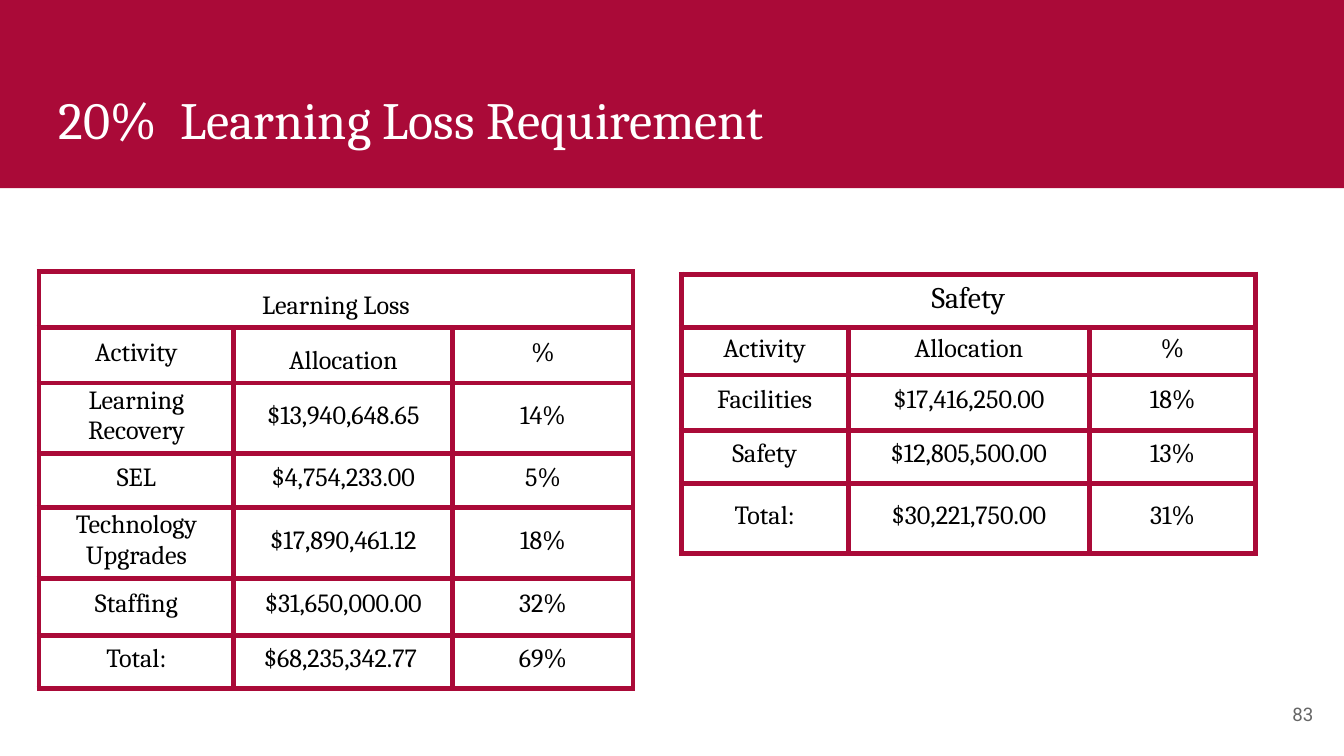
from lxml import etree
from pptx import Presentation
from pptx.dml.color import RGBColor
from pptx.enum.shapes import MSO_SHAPE
from pptx.enum.text import MSO_ANCHOR, PP_ALIGN
from pptx.oxml.ns import qn
from pptx.util import Inches, Pt

RECTANGLE = MSO_SHAPE.RECTANGLE
TOP, MIDDLE, BOTTOM = MSO_ANCHOR.TOP, MSO_ANCHOR.MIDDLE, MSO_ANCHOR.BOTTOM
LEFT, CENTER, RIGHT = PP_ALIGN.LEFT, PP_ALIGN.CENTER, PP_ALIGN.RIGHT

COLORS = {"crimson": "AA0A38", "white": "FFFFFF", "black": "000000", "gray": "666666"}
BORDER_WIDTH = Pt(3)
CELL_MARGINS = {
    "margin_left": Inches(0.01),
    "margin_top": Inches(0.01),
    "margin_right": Inches(0.01),
    "margin_bottom": Inches(0.05),
}


def write_text(frame, text, size, color, align, font="Cambria"):
    paragraph = frame.paragraphs[0]
    paragraph.alignment = align
    run = paragraph.add_run()
    run.text = text
    for name, value in {"name": font, "size": Pt(size)}.items():
        setattr(run.font, name, value)
    run.font.color.rgb = RGBColor.from_string(COLORS[color])


def draw_borders(cell):
    properties = cell._tc.get_or_add_tcPr()
    for position, side in enumerate(("a:lnL", "a:lnR", "a:lnT", "a:lnB")):
        line = etree.Element(qn(side), w=str(BORDER_WIDTH))
        fill = etree.SubElement(line, qn("a:solidFill"))
        etree.SubElement(fill, qn("a:srgbClr"), val=COLORS["crimson"])
        properties.insert(position, line)


prs = Presentation()
prs.slide_width = Inches(10)
prs.slide_height = prs.slide_width * 9 // 16
slide = prs.slides.add_slide(prs.slide_layouts[6])

banner = slide.shapes.add_shape(RECTANGLE, 0, 0, prs.slide_width, Inches(1.4))
banner.shadow.inherit = False
banner.fill.solid()
banner.fill.fore_color.rgb = RGBColor.from_string(COLORS["crimson"])
banner.line.fill.background()

labels = [
    ((0.34, 0.55, 9.32, 0.68), TOP, "20%  Learning Loss Requirement ", 28, "white", LEFT, "Cambria"),
    ((9.27, 5.1, 0.6, 0.43), MIDDLE, "83", 10, "gray", RIGHT, "Roboto"),
]
for box, anchor, text, size, color, align, font in labels:
    frame = slide.shapes.add_textbox(*map(Inches, box)).text_frame
    frame.word_wrap = True
    frame.vertical_anchor = anchor
    for side in ("left", "top", "right", "bottom"):
        setattr(frame, f"margin_{side}", Inches(0.1))
    write_text(frame, text, size, color, align, font)

HEADER = ("Activity", "Allocation", "%")
budgets = [
    {
        "heading": "Learning Loss",
        "heading_size": 14,
        "position": (0.29, 2.02),
        "widths": (1.45, 1.63, 1.34),
        "heights": (0.42, 0.41, 0.41, 0.4, 0.53, 0.42, 0.4),
        "bottom_cells": {(0, 0), (1, 1)},
        "entries": [
            ("Learning Recovery", " $13,940,648.65 ", "14%"),
            ("SEL", " $4,754,233.00 ", "5%"),
            ("Technology Upgrades", " $17,890,461.12 ", "18%"),
            ("Staffing", " $31,650,000.00 ", "32%"),
            ("Total:", "$68,235,342.77 ", "69%"),
        ],
    },
    {
        "heading": "Safety",
        "heading_size": 16,
        "position": (5.07, 2.04),
        "widths": (1.24, 1.8, 1.23),
        "heights": (0.4, 0.35, 0.41, 0.4, 0.52),
        "bottom_cells": set(),
        "entries": [
            ("Facilities", " $17,416,250.00 ", "18%"),
            ("Safety", " $12,805,500.00 ", "13%"),
            ("Total:", " $30,221,750.00 ", "31%"),
        ],
    },
]

for budget in budgets:
    widths, heights = budget["widths"], budget["heights"]
    size = (sum(widths), sum(heights))
    table = slide.shapes.add_table(
        len(heights), len(widths), *map(Inches, budget["position"] + size)
    ).table
    table.first_row = table.horz_banding = False
    for column, width in zip(table.columns, widths):
        column.width = Inches(width)
    for row, height in zip(table.rows, heights):
        row.height = Inches(height)
    table.cell(0, 0).merge(table.cell(0, len(widths) - 1))

    rows = [(budget["heading"], "", ""), HEADER, *budget["entries"]]
    for r, texts in enumerate(rows):
        for c, text in enumerate(texts):
            cell = table.cell(r, c)
            cell.fill.background()
            draw_borders(cell)
            for name, value in CELL_MARGINS.items():
                setattr(cell, name, value)
            cell.vertical_anchor = BOTTOM if (r, c) in budget["bottom_cells"] else MIDDLE
            if text:
                text_size = budget["heading_size"] if r == 0 else 14
                write_text(cell.text_frame, text, text_size, "black", CENTER)

prs.save("out.pptx")
